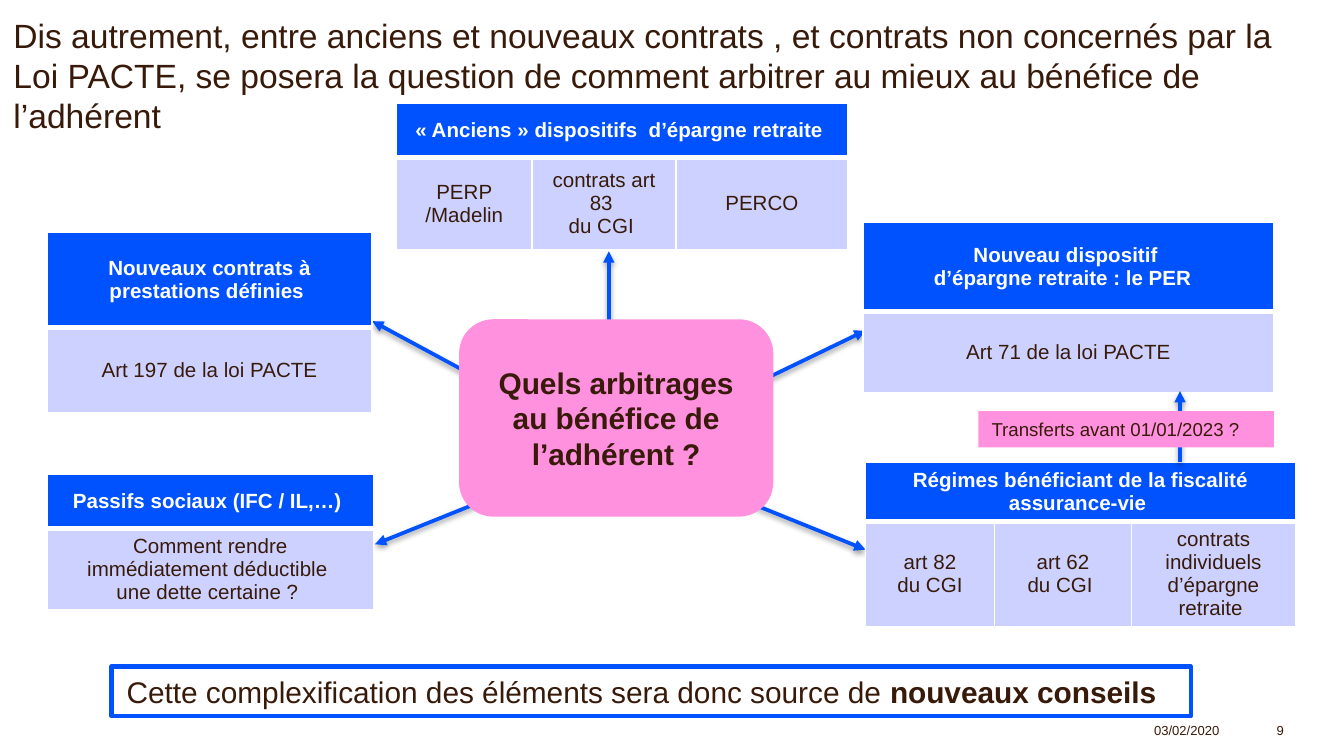
from dataclasses import dataclass

from lxml.etree import SubElement
from pptx import Presentation
from pptx.dml.color import RGBColor
from pptx.enum.shapes import MSO_CONNECTOR, MSO_SHAPE
from pptx.enum.text import MSO_ANCHOR, MSO_AUTO_SIZE, PP_ALIGN
from pptx.oxml.ns import qn
from pptx.util import Emu, Pt

PX = 9144  # 100 px to the inch
BLUE, PINK, LILAC = "0052FF", "FF91DE", "CCD1FF"
WHITE, BROWN, FOOTER = "FFFFFF", "381A0A", "391909"


@dataclass
class Grid:
    left: int
    top: int
    cols: list[int]
    rows: list[int]
    header: str
    cells: list[str]


@dataclass
class Arrow:
    x1: int
    y1: int
    x2: int
    y2: int


GRIDS = [
    Grid(35, 173, [242], [71, 63], "Nouveaux contrats à prestations définies ",
         ["Art 197 de la loi PACTE"]),
    Grid(642, 165, [306], [67, 60], "Nouveau dispositif \nd’épargne retraite : le PER  ",
         ["Art 71 de la loi PACTE"]),
    Grid(295, 77, [101, 107, 128], [40, 69],
         "« Anciens » dispositifs  d’épargne retraite ",
         ["PERP\n/Madelin", "contrats art 83 \ndu CGI ", "PERCO"]),
    Grid(35, 353, [243], [40, 56], "Passifs sociaux (IFC / IL,…) ",
         ["Comment rendre immédiatement déductible \nune dette certaine ? "]),
    Grid(644, 344, [96, 102, 122], [40, 69],
         "Régimes bénéficiant de la fiscalité assurance-vie ",
         [" art 82 \ndu CGI", " art 62 \ndu CGI ",
          "contrats individuels\nd’épargne retraite "]),
]
ARROWS = [
    Arrow(366, 287, 277, 239),
    Arrow(559, 287, 644, 246),
    Arrow(453, 266, 453, 187),
    Arrow(366, 370, 279, 405),
    Arrow(555, 373, 644, 409),
]
TRANSFER = Arrow(878, 344, 878, 291)


def px(n: int) -> Emu:
    return Emu(n * PX)


def rgb(value: str) -> RGBColor:
    return RGBColor.from_string(value)


def write(tf, text: str, size: int, color: str, bold: bool = False,
          align=PP_ALIGN.CENTER) -> None:
    """Fill a text frame, one paragraph per line of text."""
    for i, line in enumerate(text.split("\n")):
        p = tf.paragraphs[0] if i == 0 else tf.add_paragraph()
        p.alignment, p.line_spacing = align, 1.0
        r = p.add_run()
        r.text = line
        style(r.font, size, color, bold)


def style(font, size: int, color: str, bold: bool) -> None:
    for name, value in {"name": "Arial", "size": Pt(size), "bold": bold}.items():
        setattr(font, name, value)
    font.color.rgb = rgb(color)


def add_arrow(s, a: Arrow) -> None:
    sp = s.shapes.add_connector(MSO_CONNECTOR.STRAIGHT,
                                px(a.x1), px(a.y1), px(a.x2), px(a.y2))
    sp.line.color.rgb = rgb(BLUE)
    sp.line.width = Pt(2)
    SubElement(sp.line._get_or_add_ln(), qn("a:tailEnd"), type="triangle")
    # Soft shadow straight below the line
    effects = SubElement(sp._element.spPr, qn("a:effectLst"))
    shadow = SubElement(effects, qn("a:outerShdw"), blurRad=str(Pt(3.1)),
                        dist=str(Pt(1.6)), dir="5400000", rotWithShape="0")
    black = SubElement(shadow, qn("a:srgbClr"), val="000000")
    SubElement(black, qn("a:alpha"), val="38000")


def format_cell(cell, fill: str, is_header: bool) -> None:
    tcPr = cell._tc.get_or_add_tcPr()
    thick = "B" if is_header else "T"
    for side in "LRTB":
        ln = SubElement(tcPr, qn(f"a:ln{side}"), w=str(Pt(3 if side == thick else 1)))
        SubElement(SubElement(ln, qn("a:solidFill")), qn("a:srgbClr"), val=WHITE)
    cell.fill.solid()
    cell.fill.fore_color.rgb = rgb(fill)
    cell.vertical_anchor = MSO_ANCHOR.MIDDLE


def add_grid(s, g: Grid) -> None:
    table = s.shapes.add_table(2, len(g.cols), px(g.left), px(g.top),
                               px(sum(g.cols)), px(sum(g.rows))).table
    for row, height in zip(table.rows, g.rows):
        row.height = px(height)
    for i, width in enumerate(g.cols):
        table.columns[i].width = px(width)
        format_cell(table.cell(0, i), BLUE, True)
        format_cell(table.cell(1, i), LILAC, False)
        write(table.cell(1, i).text_frame, g.cells[i], 11, BROWN)
    head = table.cell(0, 0)
    if len(g.cols) > 1:
        head.merge(table.cell(0, len(g.cols) - 1))
    write(head.text_frame, g.header, 11, WHITE, True)


def add_box(s, kind, left: int, top: int, width: int, height: int,
            fill: str | None = None, line: str | None = None, weight: float = 2):
    sp = s.shapes.add_shape(kind, px(left), px(top), px(width), px(height))
    sp.shadow.inherit = False
    if fill:
        sp.fill.solid()
        sp.fill.fore_color.rgb = rgb(fill)
    else:
        sp.fill.background()
    if line:
        sp.line.color.rgb = rgb(line)
        sp.line.width = Pt(weight)
    else:
        sp.line.fill.background()
    sp.text_frame.word_wrap = True
    return sp


def add_footer(s, left: int, width: int, text: str) -> None:
    tf = s.shapes.add_textbox(px(left), px(533), px(width), px(30)).text_frame
    tf.word_wrap = True
    write(tf, text, 7, FOOTER, align=PP_ALIGN.RIGHT)


def main() -> None:
    prs = Presentation()
    prs.slide_width = px(1000)
    prs.slide_height = Emu(prs.slide_width * 9 // 16)
    s = prs.slides.add_slide(prs.slide_layouts[5])

    # Title
    title = s.shapes.title
    for name, value in {"left": 0, "top": 6, "width": 980, "height": 81}.items():
        setattr(title, name, px(value))
    tf = title.text_frame
    for name, value in {"word_wrap": True, "auto_size": MSO_AUTO_SIZE.NONE,
                        "vertical_anchor": MSO_ANCHOR.TOP}.items():
        setattr(tf, name, value)
    write(tf, "Dis autrement, entre anciens et nouveaux contrats , et contrats non "
          "concernés par la Loi PACTE, se posera la question de comment arbitrer "
          "au mieux au bénéfice de l’adhérent", 18, BROWN, align=PP_ALIGN.LEFT)

    # Arrows and tables around the central question
    for arrow in ARROWS:
        add_arrow(s, arrow)
    for grid in GRIDS:
        add_grid(s, grid)

    # Transfer arrow and its label
    add_arrow(s, TRANSFER)
    sp = add_box(s, MSO_SHAPE.RECTANGLE, 728, 306, 220, 27, PINK)
    write(sp.text_frame, "Transferts avant 01/01/2023 ?", 10, BROWN,
          align=PP_ALIGN.LEFT)

    # Central question
    sp = add_box(s, MSO_SHAPE.ROUNDED_RECTANGLE, 343, 239, 231, 144, PINK, PINK)
    write(sp.text_frame, "Quels arbitrages au bénéfice de l’adhérent ?", 16, BROWN, True)

    # Conclusion
    sp = add_box(s, MSO_SHAPE.RECTANGLE, 83, 496, 803, 37, line=BLUE, weight=2.25)
    tf = sp.text_frame
    tf.margin_right = px(24)
    write(tf, "Cette complexification des éléments sera donc source de ", 16, BROWN)
    r = tf.paragraphs[0].add_run()
    r.text = "nouveaux conseils"
    style(r.font, 16, BROWN, True)

    # Date and slide number
    add_footer(s, 846, 71, "03/02/2020")
    add_footer(s, 923, 42, "9")

    prs.save("out.pptx")


if __name__ == "__main__":
    main()
